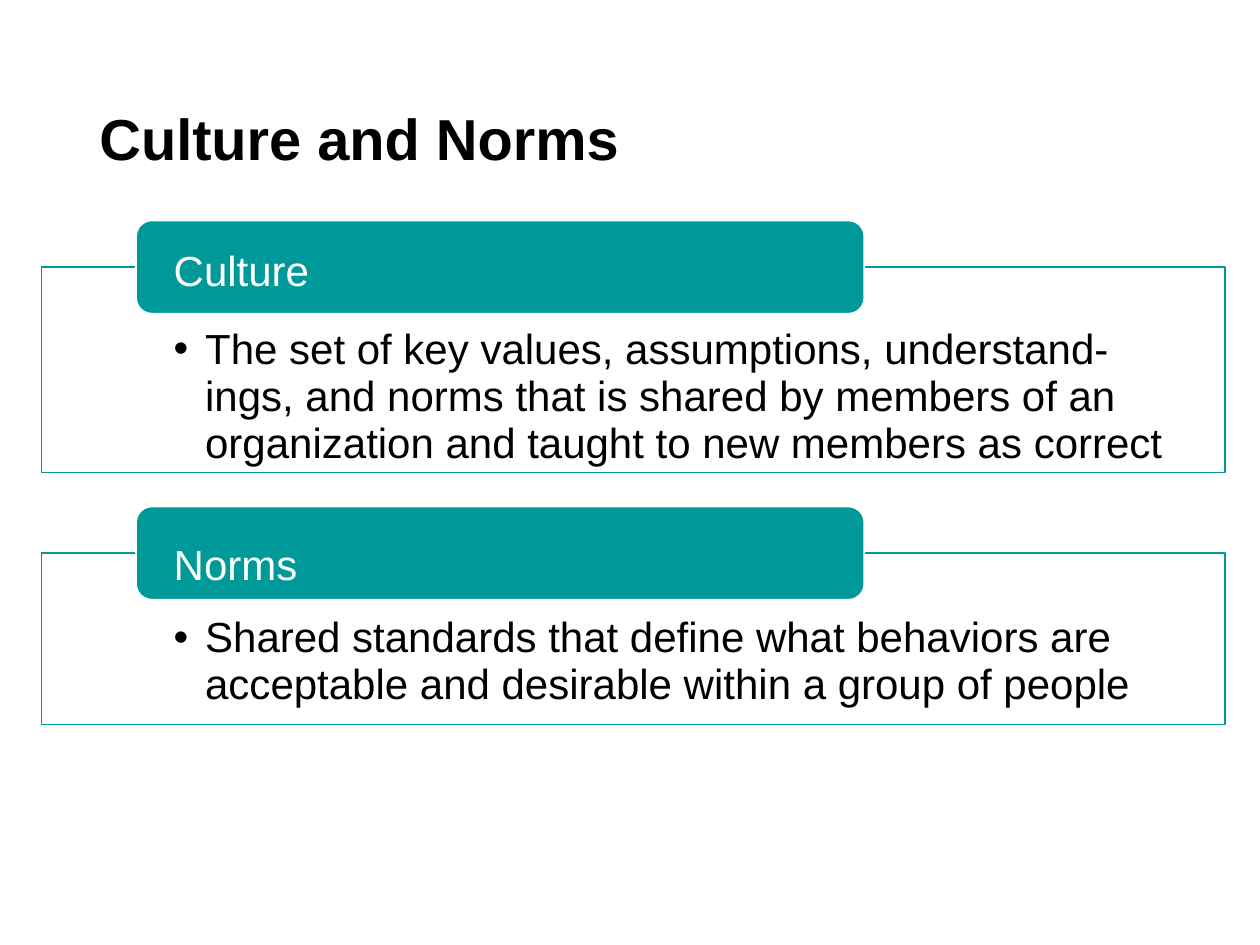
from dataclasses import dataclass

from lxml.etree import SubElement
from pptx import Presentation
from pptx.dml.color import RGBColor
from pptx.enum.shapes import MSO_SHAPE
from pptx.enum.text import MSO_ANCHOR
from pptx.oxml.ns import qn
from pptx.util import Inches, Pt

TEAL = RGBColor(0x00, 0x99, 0x99)
WHITE = RGBColor(0xFF, 0xFF, 0xFF)
BLACK = RGBColor(0x00, 0x00, 0x00)
FONT = "Arial"
COLUMNS, ROWS = 1000, 750
SLIDE_WIDTH, SLIDE_HEIGHT = Inches(10), Inches(7.5)
FRAME_LEFT, FRAME_WIDTH = 33, 939
TAB_LEFT, TAB_WIDTH, TAB_HEIGHT = 108, 578, 74
INDENT = Inches(0.25)


@dataclass(frozen=True)
class Area:
    column: int
    row: int
    columns: int
    rows: int

    def lengths(self) -> tuple[int, int, int, int]:
        across, down = SLIDE_WIDTH // COLUMNS, SLIDE_HEIGHT // ROWS
        return (self.column * across, self.row * down,
                self.columns * across, self.rows * down)


@dataclass(frozen=True)
class Topic:
    heading: str
    definition: str
    tab_row: int
    frame_rows: int
    heading_after: float
    definition_after: float


TOPICS = (
    Topic("Culture",
          "The set of key values, assumptions, understand-ings, and norms that is "
          "shared by members of an organization and taught to new members as correct",
          tab_row=175, frame_rows=163, heading_after=17.5, definition_after=42.5),
    Topic("Norms",
          "Shared standards that define what behaviors are acceptable and desirable "
          "within a group of people",
          tab_row=402, frame_rows=136, heading_after=14, definition_after=0),
)


def add_panel(page, kind: MSO_SHAPE, area: Area, line: RGBColor, fill: RGBColor | None = None):
    panel = page.shapes.add_shape(kind, *area.lengths())
    panel.shadow.inherit = False
    if fill is None:
        panel.fill.background()
    else:
        panel.fill.solid()
        panel.fill.fore_color.rgb = fill
    panel.line.color.rgb = line
    panel.line.width = Pt(1)
    return panel


def add_box(page, area: Area, anchor: MSO_ANCHOR):
    box = page.shapes.add_textbox(*area.lengths())
    box.text_frame.word_wrap = True
    box.text_frame.vertical_anchor = anchor
    return box


def add_bullet(para) -> None:
    properties = para._p.get_or_add_pPr()
    properties.set("marL", str(INDENT))
    properties.set("indent", str(-INDENT))
    SubElement(properties, qn("a:buFont"), typeface=FONT)
    SubElement(properties, qn("a:buChar"), char="•")


def write(box, text: str, *, size: float = 24, color: RGBColor = BLACK, bold: bool = False,
          spacing: float = 0.94, after: float = 0, bullet: bool = False) -> None:
    frame = box.text_frame
    para = frame.add_paragraph() if frame.text else frame.paragraphs[0]
    para.line_spacing = spacing
    para.space_after = Pt(after)
    if bullet:
        add_bullet(para)
    span = para.add_run()
    span.text = text
    span.font.name = FONT
    span.font.size = Pt(size)
    span.font.bold = bold
    span.font.color.rgb = color


def main() -> None:
    deck = Presentation()
    deck.slide_width, deck.slide_height = SLIDE_WIDTH, SLIDE_HEIGHT
    page = deck.slides.add_slide(deck.slide_layouts[6])

    for topic in TOPICS:
        frame_row = topic.tab_row + TAB_HEIGHT // 2
        add_panel(page, MSO_SHAPE.RECTANGLE,
                  Area(FRAME_LEFT, frame_row, FRAME_WIDTH, topic.frame_rows), TEAL)
        tab = add_panel(page, MSO_SHAPE.ROUNDED_RECTANGLE,
                        Area(TAB_LEFT, topic.tab_row, TAB_WIDTH, TAB_HEIGHT), WHITE, TEAL)
        tab.adjustments[0] = 0.17

    title = add_box(page, Area(69, 40, 755, 145), MSO_ANCHOR.MIDDLE)
    write(title, "Culture and Norms", size=33, bold=True, spacing=0.9)

    body = add_box(page, Area(128, 192, 805, 458), MSO_ANCHOR.TOP)
    body.text_frame.margin_right = Inches(0.05)
    for topic in TOPICS:
        write(body, topic.heading, color=WHITE, after=topic.heading_after)
        write(body, topic.definition, after=topic.definition_after, bullet=True)

    deck.save("out.pptx")


if __name__ == "__main__":
    main()
